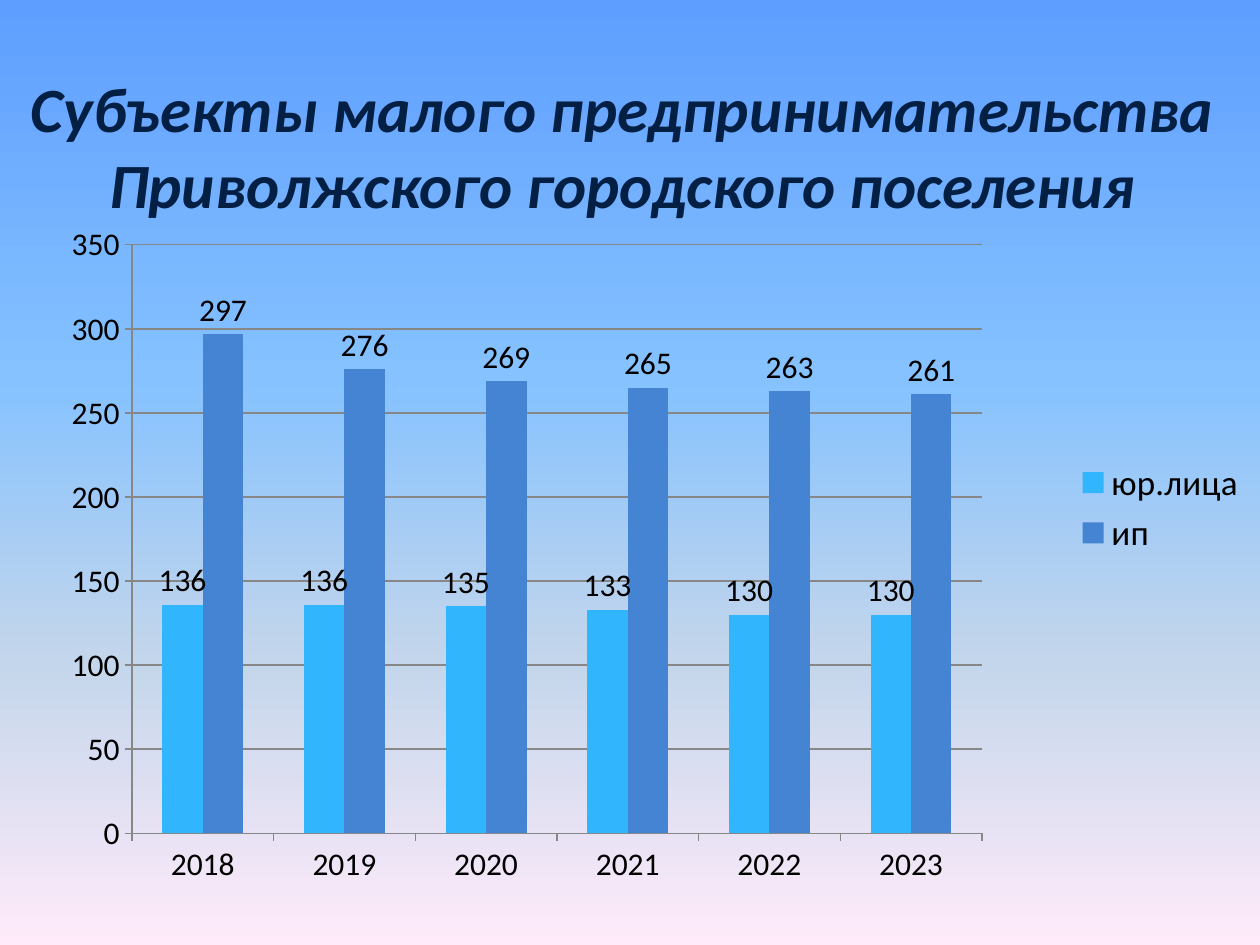
from copy import deepcopy

from lxml import etree
from pptx import Presentation
from pptx.chart import data
from pptx.dml.color import RGBColor
from pptx.enum import chart as ch, text
from pptx.oxml.ns import qn
from pptx.util import Inches, Pt

HUES = {"title": "041F44", "text": "000000", "grid": "878787",
        "firms": "31B6FD", "sole": "4584D3"}
SKY = [(0, "5E9EFF"), (0.4, "85C2FF"), (0.7, "C4D6EB"), (1, "FFEBFA")]
YEARS = ["2018", "2019", "2020", "2021", "2022", "2023"]
ROWS = [("юр.лица", [136, 136, 135, 133, 130, 130], "firms"),
        ("ип", [297, 276, 269, 265, 263, 261], "sole")]
PLOT = {"x": 0.079, "y": 0.173, "w": 0.694, "h": 0.732}


def style(font, hue, **form):
    font.color.rgb = RGBColor.from_string(HUES[hue])
    for key, val in {"name": "Calibri", **form}.items():
        setattr(font, key, val)


def place(shape, left, top, width, height):
    for key, val in zip(("left", "top", "width", "height"),
                        (left, top, width, height)):
        setattr(shape, key, Inches(val))


def paint_sky(slide):
    fill = slide.background.fill
    fill.gradient()
    fill.gradient_angle = 270
    stops = slide.element.find(".//" + qn("a:gsLst"))
    while len(stops) < len(SKY):
        stops.append(deepcopy(stops[0]))
    for stop, (pos, hue) in zip(fill.gradient_stops, SKY):
        stop.position = pos
        stop.color.rgb = RGBColor.from_string(hue)


def add_title(slide, words):
    title = slide.shapes.title
    place(title, 0, 0.21, 9.88, 1.89)
    frame = title.text_frame
    frame.text = words
    frame.vertical_anchor = text.MSO_ANCHOR.MIDDLE
    para = frame.paragraphs[0]
    para.alignment = text.PP_ALIGN.CENTER
    style(para.runs[0].font, "title", size=Pt(36), bold=True, italic=True)


def fix_plot(chart):
    """Set the inner plot area as fractions of the chart."""
    area = chart.element.find(".//" + qn("c:plotArea"))
    for old in area.findall(qn("c:layout")):
        area.remove(old)
    layout = etree.Element(qn("c:layout"))
    area.insert(0, layout)
    manual = etree.SubElement(layout, qn("c:manualLayout"))
    parts = {"layoutTarget": "inner", "xMode": "edge", "yMode": "edge", **PLOT}
    for tag, val in parts.items():
        etree.SubElement(manual, qn("c:" + tag)).set("val", str(val))


def draw_line(line):
    line.color.rgb = RGBColor.from_string(HUES["grid"])
    line.width = Pt(0.75)


def add_bars(slide):
    source = data.CategoryChartData()
    source.categories = YEARS
    for name, vals, _ in ROWS:
        source.add_series(name, vals)
    box = [Inches(n) for n in (0.28, 0.84, 9.72, 6.38)]
    chart = slide.shapes.add_chart(
        ch.XL_CHART_TYPE.COLUMN_CLUSTERED, *box, source).chart
    chart.has_title = False
    style(chart.font, "text", size=Pt(18))
    fix_plot(chart)

    for axis in (chart.category_axis, chart.value_axis):
        axis.major_tick_mark = ch.XL_TICK_MARK.OUTSIDE
        draw_line(axis.format.line)
    scale = chart.value_axis
    scale.minimum_scale, scale.maximum_scale, scale.major_unit = 0, 350, 50
    draw_line(scale.major_gridlines.format.line)

    plot = chart.plots[0]
    plot.gap_width, plot.overlap = 150, 0
    plot.vary_by_categories = False
    for bars, (_, _, hue) in zip(plot.series, ROWS):
        bars.format.fill.solid()
        bars.format.fill.fore_color.rgb = RGBColor.from_string(HUES[hue])
        labels = bars.data_labels
        labels.show_value = True
        labels.position = ch.XL_LABEL_POSITION.OUTSIDE_END
        style(labels.font, "text", size=Pt(18))

    chart.has_legend = True
    chart.legend.position = ch.XL_LEGEND_POSITION.RIGHT
    chart.legend.include_in_layout = False
    style(chart.legend.font, "text", size=Pt(20))


def main():
    deck = Presentation()
    deck.slide_width, deck.slide_height = Inches(10), Inches(7.5)
    slide = deck.slides.add_slide(deck.slide_layouts[5])
    paint_sky(slide)
    add_title(slide, "Субъекты малого предпринимательства "
                     "Приволжского городского поселения")
    add_bars(slide)
    deck.save("out.pptx")


if __name__ == "__main__":
    main()
